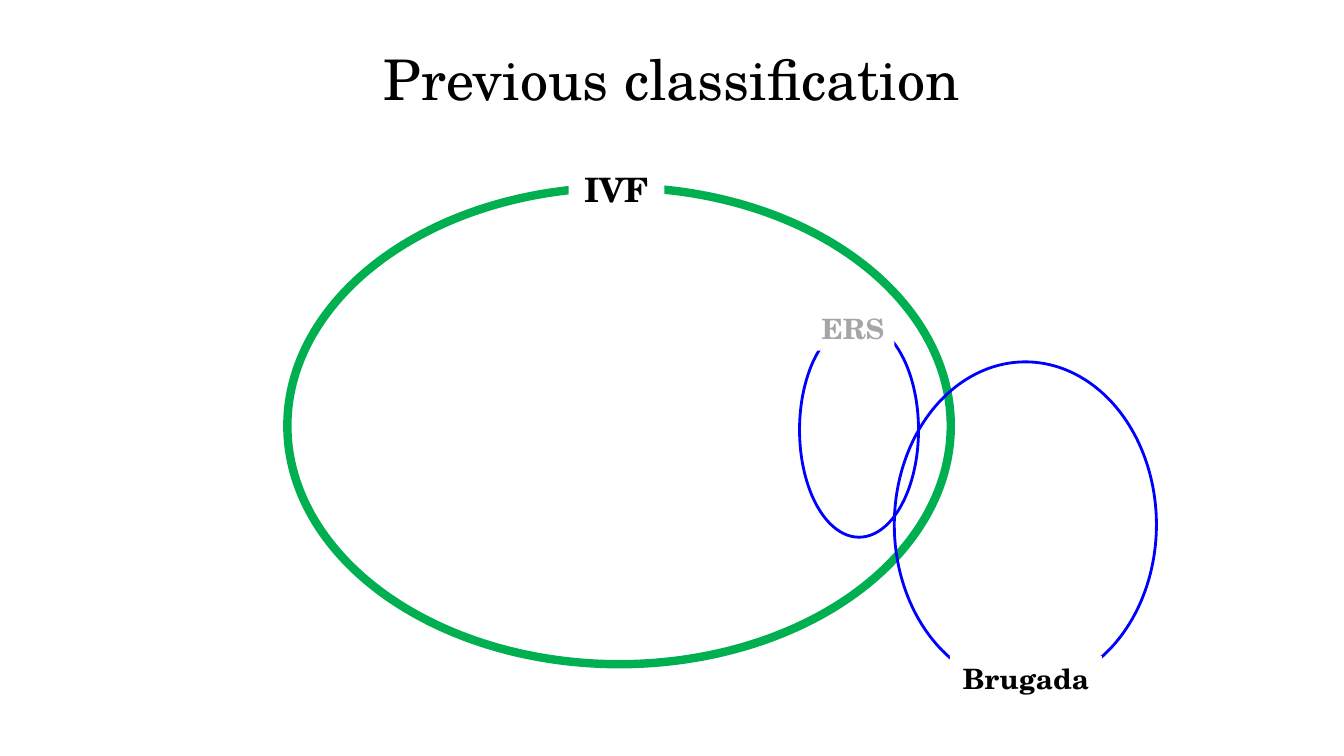
"""Build a slide showing the previous classification as overlapping sets."""
from dataclasses import dataclass

from pptx import Presentation, util as u
from pptx.dml.color import RGBColor
from pptx.enum import shapes, text

PX = 9144
SLIDE_SIZE = (1333, 750)


@dataclass(frozen=True)
class Theme:
    font: str = "TeX Gyre Schola"
    ink: str = "000000"
    muted: str = "A6A6A6"
    paper: str = "FFFFFF"
    main_set: str = "00B050"
    subset: str = "0000FF"
    title_size: int = 40
    main_size: int = 24
    subset_size: int = 20
    main_line: int = 6
    subset_line: int = 2


THEME = Theme()
TITLE = ("Previous classification", (190, 36, 952, 83))
MAIN_OUTLINE = (THEME.main_set, THEME.main_line)
SUBSET_OUTLINE = (THEME.subset, THEME.subset_line)
SETS = [
    ("IVF", (285, 186, 658, 473), MAIN_OUTLINE,
     (564, 162, 95, 51), THEME.main_size, THEME.ink),
    ("Brugada", (887, 359, 260, 323), SUBSET_OUTLINE,
     (942, 651, 151, 44), THEME.subset_size, THEME.ink),
    ("ERS", (793, 320, 118, 213), SUBSET_OUTLINE,
     (805, 304, 82, 44), THEME.subset_size, THEME.muted),
]


def emu(lengths):
    return [length * PX for length in lengths]


def write(holder, words, size, color, bold, wrap):
    frame = holder.text_frame
    frame.word_wrap = wrap
    frame.vertical_anchor = text.MSO_ANCHOR.MIDDLE
    line = frame.paragraphs[0]
    line.text = words
    line.alignment = text.PP_ALIGN.CENTER
    line.font.name = THEME.font
    line.font.size = u.Pt(size)
    line.font.bold = bold
    line.font.color.rgb = RGBColor.from_string(color)


def add_set(slide, name, ring_box, outline, label_box, size, color):
    ring = slide.shapes.add_shape(shapes.MSO_SHAPE.OVAL, *emu(ring_box))
    ring.shadow.inherit = False
    ring.fill.background()
    ring.line.color.rgb = RGBColor.from_string(outline[0])
    ring.line.width = u.Pt(outline[1])

    label = slide.shapes.add_shape(shapes.MSO_SHAPE.RECTANGLE, *emu(label_box))
    label.shadow.inherit = False
    label.fill.solid()
    label.fill.fore_color.rgb = RGBColor.from_string(THEME.paper)
    label.line.fill.background()
    write(label, name, size, color, bold=True, wrap=False)


def main():
    deck = Presentation()
    deck.slide_width, deck.slide_height = emu(SLIDE_SIZE)
    slide = deck.slides.add_slide(deck.slide_layouts[6])
    heading, heading_box = TITLE
    title = slide.shapes.add_textbox(*emu(heading_box))
    write(title, heading, THEME.title_size, THEME.ink, bold=False, wrap=True)
    for entry in SETS:
        add_set(slide, *entry)
    deck.save("out.pptx")


if __name__ == "__main__":
    main()
